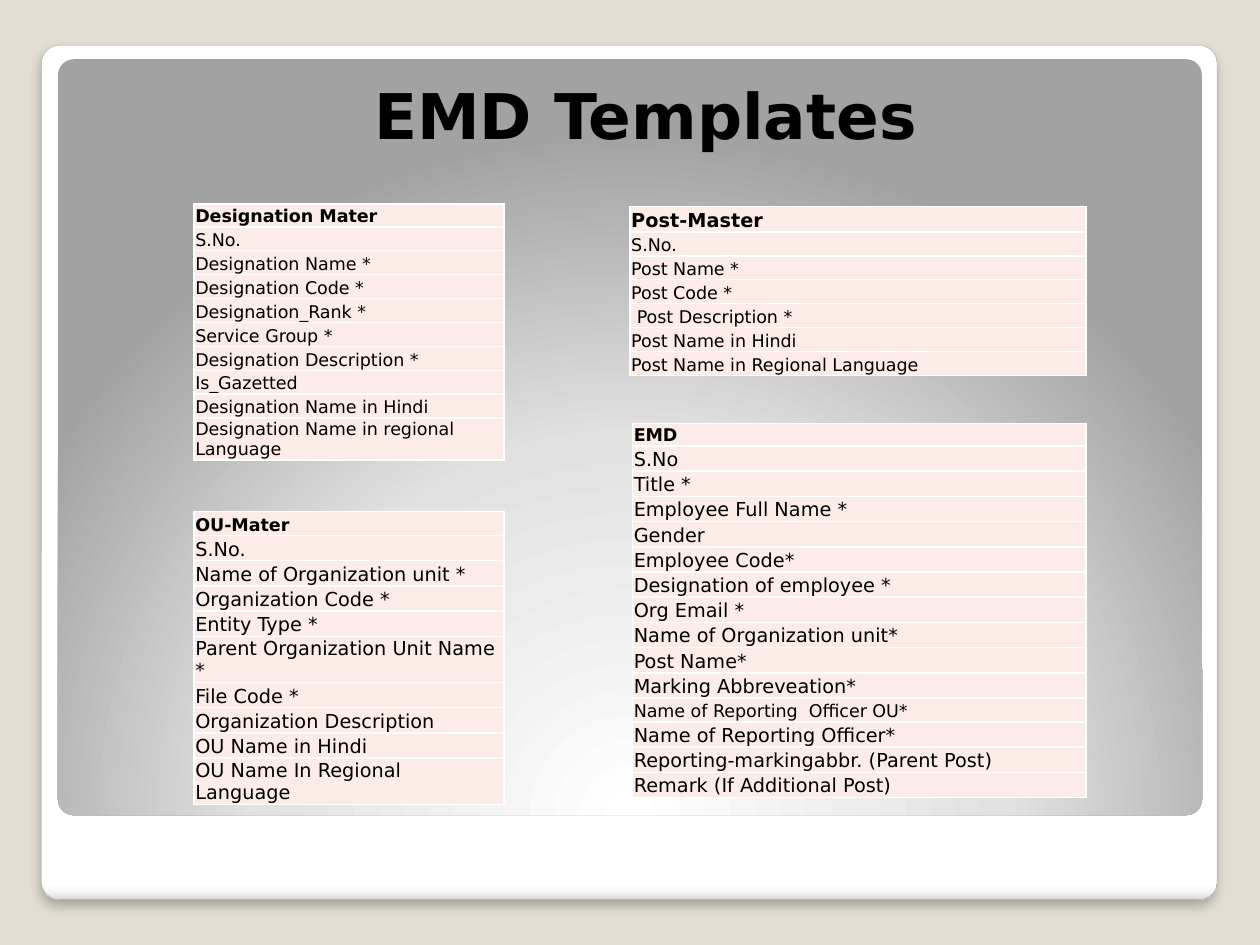
from lxml import etree
from pptx import Presentation
from pptx.dml.color import RGBColor
from pptx.enum import shapes as sh, text as tx
from pptx.oxml import ns
from pptx.util import Inches, Pt

FONT = "DejaVu Sans"
BLACK = RGBColor(0x00, 0x00, 0x00)
WHITE = RGBColor(0xFF, 0xFF, 0xFF)
SAND = RGBColor(0xE3, 0xDE, 0xD1)
PINK = RGBColor(0xFC, 0xEC, 0xE7)
EDGE = RGBColor(0xA4, 0xA4, 0xA4)
PALE = RGBColor(0xF7, 0xF7, 0xF7)
LIGHT = RGBColor(0xDA, 0xDA, 0xDA)
SILVER = RGBColor(0xE1, 0xE1, 0xE1)
GREY = RGBColor(0xA2, 0xA2, 0xA2)

TITLE = "EMD Templates"
CARD = [(0, WHITE), (98, WHITE), (99, PALE), (100, LIGHT)]
PANEL = [(0, WHITE), (55, SILVER), (100, GREY)]
HEIGHT = {10: 0.19, 11: 0.2}
SMALL = "Name of Reporting  Officer OU*"

TABLES = [
    dict(left=1.54, top=1.62, width=2.46, head=(10, 0.18), size=10, rows=[
        "Designation Mater", "S.No.", "Designation Name *",
        "Designation Code *", "Designation_Rank *", "Service Group *",
        "Designation Description *", "Is_Gazetted",
        "Designation Name in Hindi",
        "Designation Name in regional Language"]),
    dict(left=5, top=1.64, width=3.62, head=(11, 0.2), size=10, rows=[
        "Post-Master", "S.No.", "Post Name *", "Post Code *",
        " Post Description *", "Post Name in Hindi",
        "Post Name in Regional Language"]),
    dict(left=5.02, top=3.36, width=3.6, head=(10, 0.18), size=11, rows=[
        "EMD", "S.No", "Title *", "Employee Full Name *", "Gender",
        "Employee Code*", "Designation of employee *", "Org Email *",
        "Name of Organization unit*", "Post Name*",
        "Marking Abbreveation*", SMALL, "Name of Reporting Officer*",
        "Reporting-markingabbr. (Parent Post)",
        "Remark (If Additional Post)"]),
    dict(left=1.54, top=4.06, width=2.46, head=(10, 0.19), size=11, rows=[
        "OU-Mater", "S.No.", "Name of Organization unit *",
        "Organization Code *", "Entity Type *",
        "Parent Organization Unit Name *", "File Code *",
        "Organization Description", "OU Name in Hindi",
        "OU Name In Regional Language"]),
]


def add(node, tag, **attrs):
    return etree.SubElement(node, ns.qn(tag), {k: str(v) for k, v in attrs.items()})


def style(para, size, bold):
    for run in para.runs:
        font = run.font
        font.name, font.size, font.bold = FONT, Pt(size), bold
        font.color.rgb = BLACK


def add_box(slide, box, stops):
    shape = slide.shapes.add_shape(
        sh.MSO_SHAPE.ROUNDED_RECTANGLE, *map(Inches, box))
    shape.adjustments[0] = 0.021
    shape.shadow.inherit = False
    shape.line.fill.background()
    shape.fill.gradient()
    grad = shape.element.spPr.find(ns.qn("a:gradFill"))
    for node in list(grad):
        grad.remove(node)
    items = add(grad, "a:gsLst")
    for pos, color in stops:
        add(add(items, "a:gs", pos=pos * 1000), "a:srgbClr", val=color)
    return shape, grad


def add_list(slide, left, top, width, head, size, rows):
    sizes = [head[0]] + [10 if row == SMALL else size for row in rows[1:]]
    highs = [head[1]] + [HEIGHT[s] for s in sizes[1:]]
    table = slide.shapes.add_table(
        len(rows), 1, Inches(left), Inches(top),
        Inches(width), Inches(sum(highs))).table
    for i, row in enumerate(rows):
        table.rows[i].height = Inches(highs[i])
        cell = table.cell(i, 0)
        cell.margin_left = cell.margin_right = cell.margin_top = Inches(0.01)
        cell.margin_bottom = 0
        cell.vertical_anchor = tx.MSO_ANCHOR.BOTTOM
        for side in "LRTB":
            line = add(cell._tc.tcPr, "a:ln" + side, w=Pt(1))
            add(add(line, "a:solidFill"), "a:srgbClr", val=WHITE)
        cell.fill.solid()
        cell.fill.fore_color.rgb = PINK
        cell.text_frame.text = row
        style(cell.text_frame.paragraphs[0], sizes[i], i == 0)


def main():
    deck = Presentation()
    deck.slide_width, deck.slide_height = Inches(10), Inches(7.5)
    slide = deck.slides.add_slide(deck.slide_layouts[5])
    slide.background.fill.solid()
    slide.background.fill.fore_color.rgb = SAND

    card, grad = add_box(slide, (0.33, 0.36, 9.33, 6.78), CARD)
    add(grad, "a:lin", ang=5400000, scaled=0)
    card.line.color.rgb = EDGE
    card.line.width = Pt(0.16)
    effect = card.element.spPr.find(ns.qn("a:effectLst"))
    shade = add(effect, "a:outerShdw", blurRad=Pt(6), dist=Pt(4),
                dir=5400000, algn="ctr", rotWithShape=0)
    add(add(shade, "a:srgbClr", val=BLACK), "a:alpha", val=25000)

    panel, grad = add_box(slide, (0.46, 0.47, 9.08, 6), PANEL)
    add(add(grad, "a:path", path="circle"), "a:fillToRect",
        l=50000, t=175000, r=50000, b=-75000)

    for item in TABLES:
        add_list(slide, **item)

    title = slide.shapes.title
    title.left, title.top = Inches(2.87), Inches(0.56)
    title.width, title.height = Inches(4.88), Inches(0.71)
    frame = title.text_frame
    frame.text = TITLE
    frame.word_wrap = True
    frame.auto_size = tx.MSO_AUTO_SIZE.SHAPE_TO_FIT_TEXT
    frame.vertical_anchor = tx.MSO_ANCHOR.TOP
    frame.paragraphs[0].alignment = tx.PP_ALIGN.LEFT
    style(frame.paragraphs[0], 36, True)
    slide.shapes._spTree.append(title.element)

    deck.save("out.pptx")


if __name__ == "__main__":
    main()
